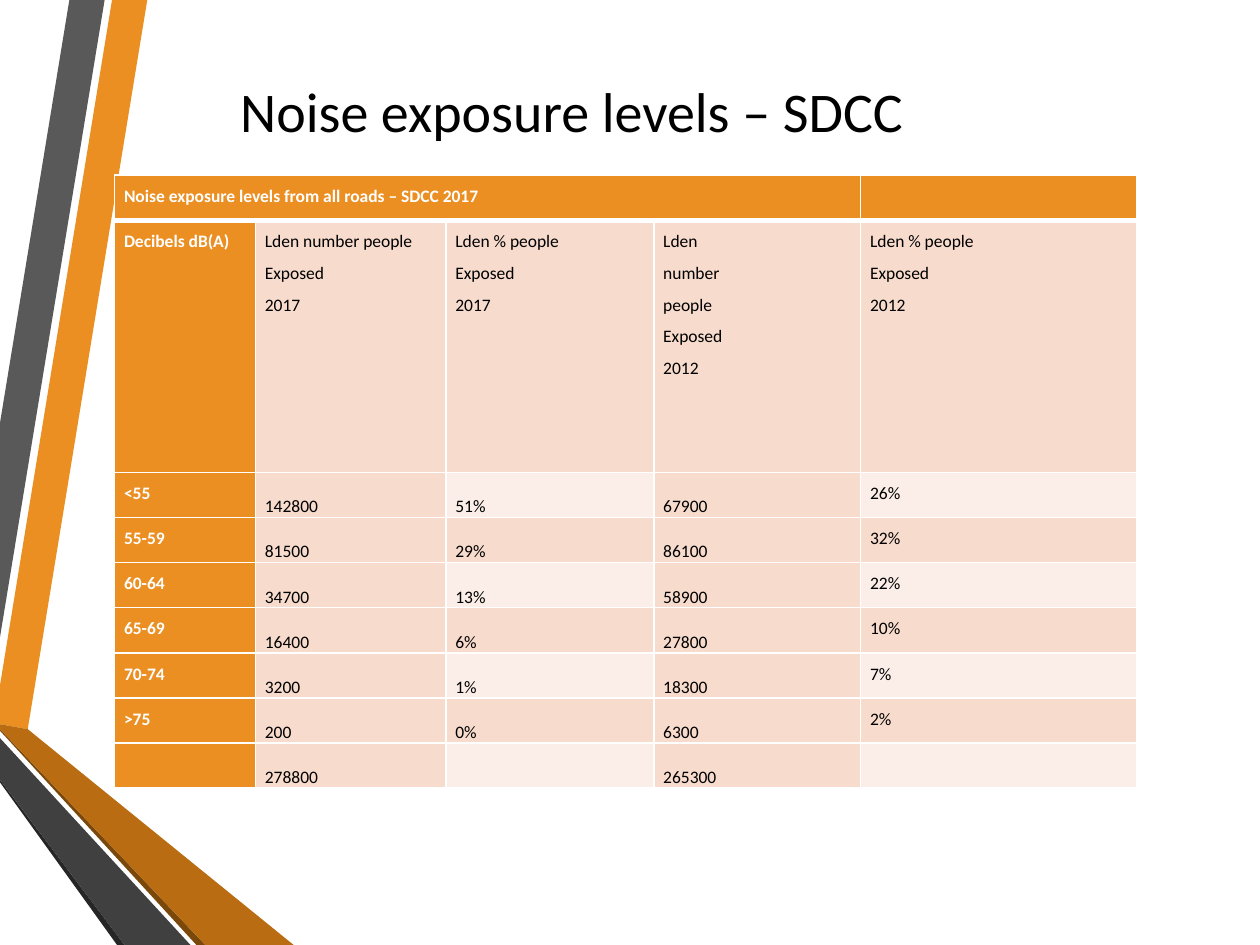
from dataclasses import dataclass

from lxml import etree
from pptx import Presentation
from pptx.dml.color import RGBColor
from pptx.enum.text import MSO_ANCHOR, PP_ALIGN
from pptx.oxml.ns import qn
from pptx.slide import Slide
from pptx.util import Cm, Pt

TOP, MIDDLE, BOTTOM = MSO_ANCHOR.TOP, MSO_ANCHOR.MIDDLE, MSO_ANCHOR.BOTTOM
CENTER, JUSTIFY = PP_ALIGN.CENTER, PP_ALIGN.JUSTIFY

RIBBONS = [
    ("EB8F22", [(0, 13.82), (0, 14.6), (0.56, 14.7), (2.97, 0), (2.26, 0)]),
    ("595959", [(2.11, 0), (1.4, 0), (0, 8.53), (0, 12.85)]),
    ("262626", [(0, 15.72), (0, 15.77), (2.36, 19.05), (2.51, 19.05)]),
    ("7B480B", [(0, 14.7), (0, 14.73), (3.96, 19.05), (4.14, 19.05)]),
    ("B96C11", [(0, 14.7), (4.14, 19.05), (5.92, 19.05), (0.56, 14.7), (0, 14.6)]),
    ("404040", [(0, 15.72), (2.51, 19.05), (3.84, 19.05), (0, 14.88)]),
]
EXPOSURE = [
    ["Noise exposure levels from all roads – SDCC 2017", "", "", "", ""],
    ["Decibels dB(A)", "Lden number people\nExposed\n2017", "Lden % people\nExposed\n2017",
     "Lden\nnumber\npeople\nExposed\n2012", "Lden % people\nExposed\n2012"],
    ["<55", "142800", "51%", "67900", "26%"],
    ["55-59", "81500", "29%", "86100", "32%"],
    ["60-64", "34700", "13%", "58900", "22%"],
    ["65-69", "16400", "6%", "27800", "10%"],
    ["70-74", "3200", "1%", "18300", "7%"],
    [">75", "200", "0%", "6300", "2%"],
    ["", "278800", "", "265300", ""],
]
COLUMN_WIDTHS = [2.84, 3.84, 4.19, 4.17, 5.56]
ROW_HEIGHTS = [0.91, 5.08] + [0.91] * 7


def rgb(value):
    """Turn a hex string into a colour."""
    return RGBColor.from_string(value)


def write(frame, text, font="Calibri", size=10, color="000000", bold=False,
          align=JUSTIFY, spacing=1.0):
    """Fill a text frame with one paragraph per line of text."""
    for number, line in enumerate(text.split("\n")):
        paragraph = frame.add_paragraph() if number else frame.paragraphs[0]
        paragraph.alignment = align
        paragraph.line_spacing = spacing
        if line:
            run = paragraph.add_run()
            run.text = line
            run.font.name, run.font.size, run.font.bold = font, Pt(size), bold
            run.font.color.rgb = rgb(color)


def add_borders(cell, color, **widths):
    """Draw the cell borders, with a width in points for each side."""
    properties = cell._tc.get_or_add_tcPr()
    for side in "LRTB":
        line = etree.SubElement(properties, qn(f"a:ln{side}"), w=str(Pt(widths.get(side, 1))))
        fill = etree.SubElement(line, qn("a:solidFill"))
        etree.SubElement(fill, qn("a:srgbClr"), val=color)


@dataclass
class NoiseSlide:
    """Hold the slide and its style."""
    slide: Slide
    accent: str = "EB8F22"
    tint: str = "F7DBCD"
    light_tint: str = "FBEEE8"
    white: str = "FFFFFF"

    def ribbon(self, color, corners):
        """Draw one filled ribbon of the side decoration."""
        start, *rest = [(Cm(x), Cm(y)) for x, y in corners]
        builder = self.slide.shapes.build_freeform(*start)
        builder.add_line_segments(rest, close=True)
        band = builder.convert_to_shape()
        band.shadow.inherit = False
        band.fill.solid()
        band.fill.fore_color.rgb = rgb(color)
        band.line.fill.background()

    def title(self, text, left, top, width, height):
        """Place and fill the title."""
        heading = self.slide.shapes.title
        heading.left, heading.top = Cm(left), Cm(top)
        heading.width, heading.height = Cm(width), Cm(height)
        heading.text_frame.vertical_anchor = MIDDLE
        write(heading.text_frame, text, size=32, align=CENTER)

    def cell_fill(self, row, column):
        """Choose a cell colour from its place in the table."""
        if row == 0 or column == 0:
            return self.accent
        return self.light_tint if row > 1 and row % 2 == 0 and column in (2, 4) else self.tint

    def table(self, rows, left, top, widths, heights):
        """Build the exposure table."""
        grid = self.slide.shapes.add_table(
            len(rows), len(widths), Cm(left), Cm(top), Cm(sum(widths)), Cm(sum(heights))).table
        for column, width in zip(grid.columns, widths):
            column.width = Cm(width)
        for row, height in zip(grid.rows, heights):
            row.height = Cm(height)
        grid.cell(0, 0).merge(grid.cell(0, 3))
        for r, values in enumerate(rows):
            for c, value in enumerate(values):
                cell = grid.cell(r, c)
                heading = r == 0 or c == 0
                add_borders(cell, self.white, T=3 if r == 1 else 1, B=3 if r == 0 else 1)
                cell.fill.solid()
                cell.fill.fore_color.rgb = rgb(self.cell_fill(r, c))
                cell.margin_left = cell.margin_right = Cm(0.19)
                cell.margin_top = cell.margin_bottom = 0
                cell.vertical_anchor = BOTTOM if r > 1 and c in (1, 2, 3) else TOP
                write(cell.text_frame, value, bold=heading, spacing=1.5,
                      color=self.white if heading else "000000")


def main():
    """Build and save the presentation."""
    deck = Presentation()
    deck.slide_width, deck.slide_height = Cm(25.4), Cm(19.05)
    noise = NoiseSlide(deck.slides.add_slide(deck.slide_layouts[5]))
    for color, corners in RIBBONS:
        noise.ribbon(color, corners)
    noise.title("Noise exposure levels – SDCC", 2.49, 1.32, 18.08, 1.8)
    noise.table(EXPOSURE, 2.31, 3.53, COLUMN_WIDTHS, ROW_HEIGHTS)
    deck.save("out.pptx")


if __name__ == "__main__":
    main()
